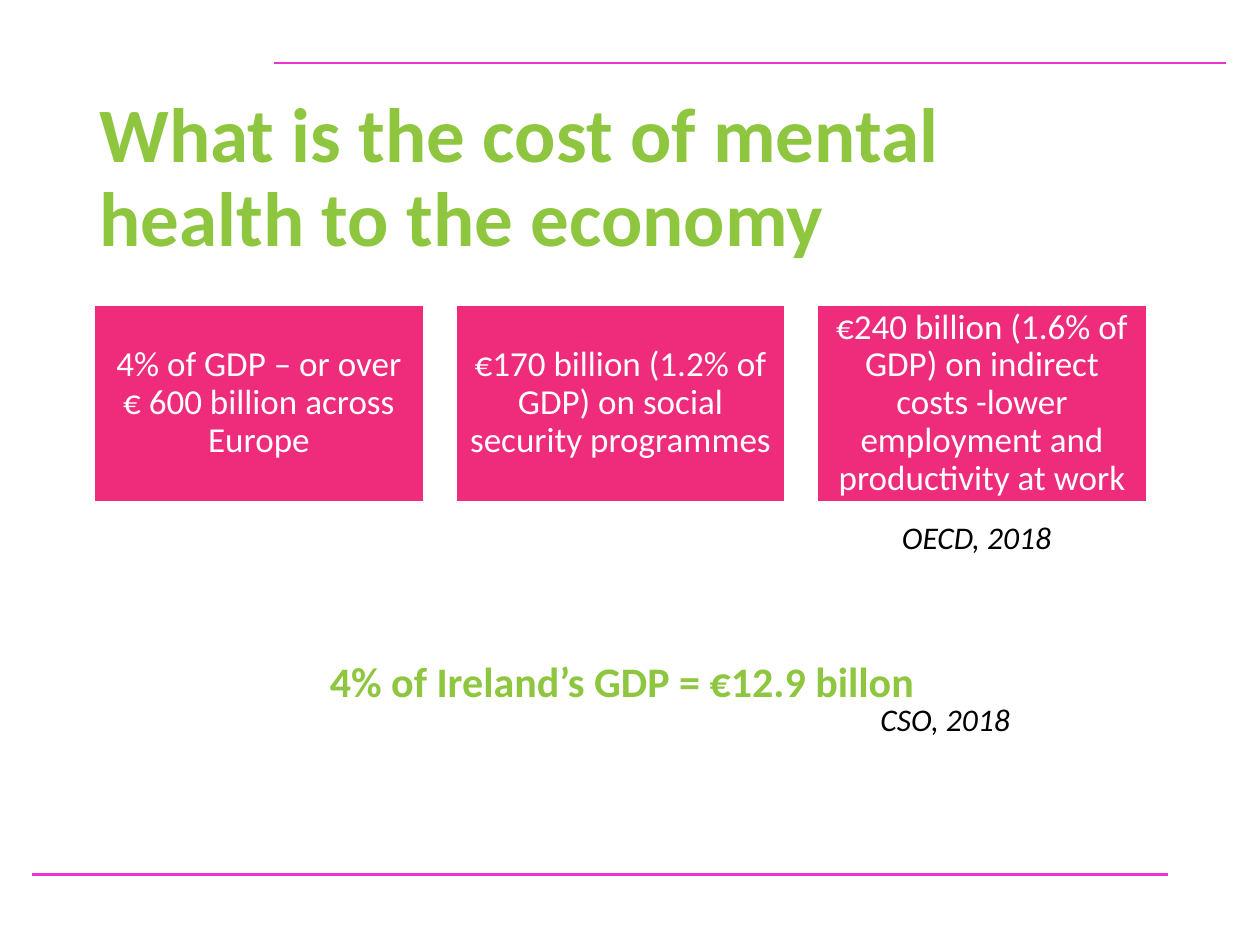
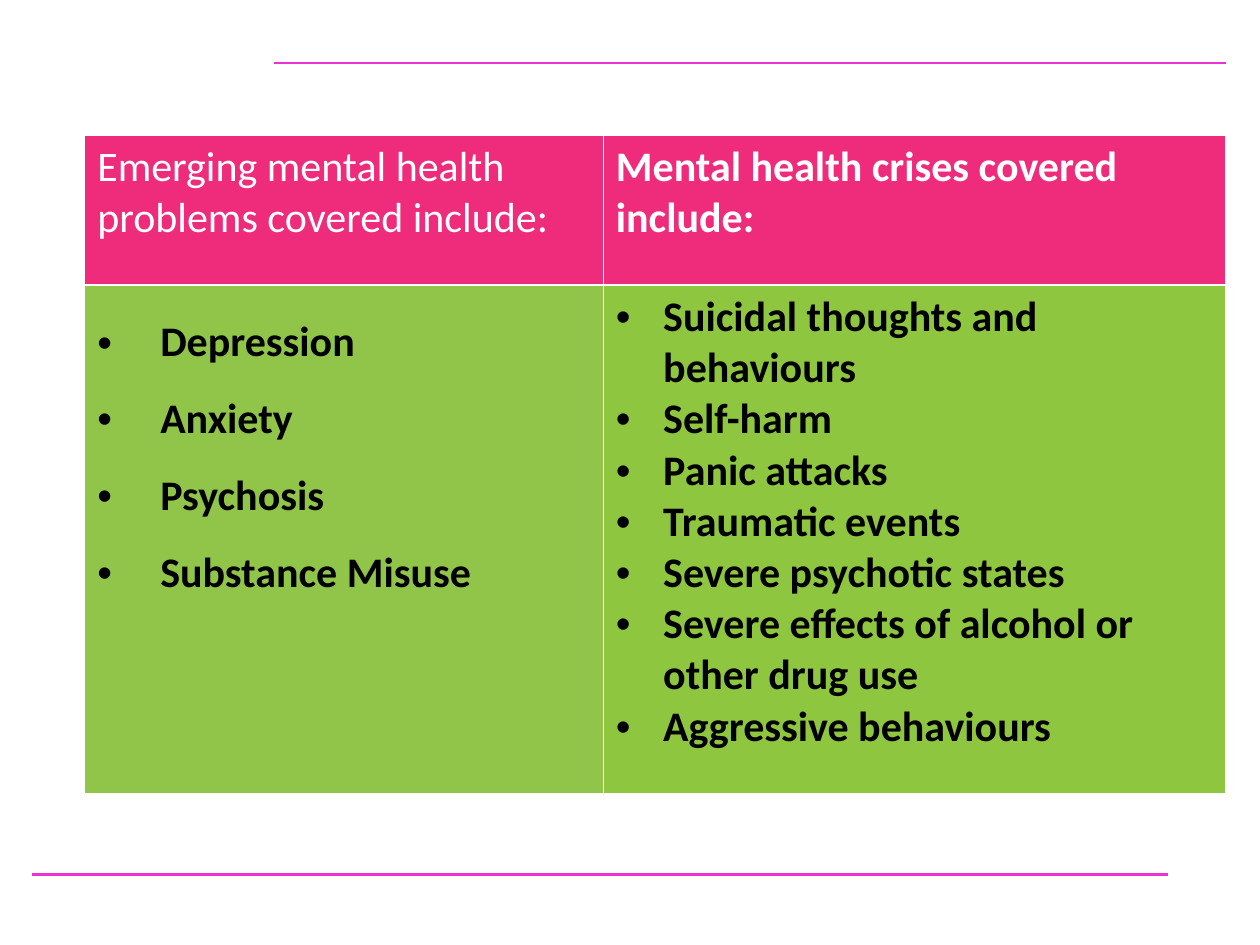
"""Build two slides on the cost and scope of mental health problems."""
import pptx
import pptx.chart.data
import pptx.dml.color
import pptx.enum.shapes
import pptx.enum.text
import pptx.oxml
import pptx.oxml.ns
import pptx.util
from lxml import etree

Pt = pptx.util.Pt
RGBColor = pptx.dml.color.RGBColor
Anchor = pptx.enum.text.MSO_ANCHOR
Align = pptx.enum.text.PP_ALIGN

FONT = "Calibri"
WHITE = RGBColor(0xFF, 0xFF, 0xFF)
BLACK = RGBColor(0x00, 0x00, 0x00)
GREEN = RGBColor(0x8E, 0xC6, 0x40)
SOFT_GREEN = RGBColor(0x91, 0xC5, 0x49)
PINK = RGBColor(0xEE, 0x2C, 0x7B)
MAGENTA = RGBColor(0xEC, 0x32, 0xD1)

TITLE_ONLY, BLANK = 5, 6
CARD_LEFT, CARD_TOP, CARD_WIDTH, CARD_HEIGHT, CARD_GAP = 54, 174.24, 188, 112.5, 18.6

COSTS = [
    "4% of GDP – or over € 600 billion across Europe",
    "€170 billion (1.2% of GDP) on social security programmes",
    "€240 billion (1.6% of GDP) on indirect costs -lower employment and productivity at work",
]
PROBLEMS = ["Depression", "Anxiety", "Psychosis", "Substance Misuse"]
CRISES = [
    "Suicidal thoughts and behaviours",
    "Self-harm",
    "Panic attacks",
    "Traumatic events",
    "Severe psychotic states",
    "Severe effects of alcohol or other drug use",
    "Aggressive behaviours",
]


def set_font(para, size, color, bold=False, italic=False):
    """Format all the text of a paragraph."""
    font = para.font
    font.name, font.size = FONT, Pt(size)
    font.bold, font.italic = bold, italic
    font.color.rgb = color


def add_rule(page, left, right, top):
    """Draw one horizontal magenta rule."""
    rule = page.shapes.add_connector(
        pptx.enum.shapes.MSO_CONNECTOR.STRAIGHT, Pt(left), Pt(top), Pt(right), Pt(top))
    rule.line.color.rgb = MAGENTA
    rule.line.width = Pt(1.5)
    etree.SubElement(rule._element.spPr, pptx.oxml.ns.qn("a:effectLst"))


def add_page(deck, layout):
    """Add a slide with the shared top and bottom rules."""
    page = deck.slides.add_slide(deck.slide_layouts[layout])
    add_rule(page, 156.5, 700.5, 36)
    add_rule(page, 18, 667.5, 499.7)
    return page


def set_title(page, text):
    """Place and format the slide title."""
    title = page.shapes.title
    title.left, title.top, title.width, title.height = Pt(49.7), Pt(72.7), Pt(620.6), Pt(59.8)
    frame = title.text_frame
    frame.text = text
    frame.word_wrap = True
    frame.auto_size = pptx.enum.text.MSO_AUTO_SIZE.NONE
    frame.vertical_anchor = Anchor.MIDDLE
    para = frame.paragraphs[0]
    para.alignment = Align.LEFT
    para.line_spacing = 0.9
    set_font(para, 44, GREEN, bold=True)


def add_card(page, left, text):
    """Add a pink card with centred white text."""
    card = page.shapes.add_shape(
        pptx.enum.shapes.MSO_SHAPE.RECTANGLE,
        Pt(left), Pt(CARD_TOP), Pt(CARD_WIDTH), Pt(CARD_HEIGHT))
    card.shadow.inherit = False
    card.fill.solid()
    card.fill.fore_color.rgb = PINK
    card.line.color.rgb = WHITE
    card.line.width = Pt(1)
    frame = card.text_frame
    frame.word_wrap = True
    frame.vertical_anchor = Anchor.MIDDLE
    frame.margin_left = frame.margin_right = Pt(6)
    frame.margin_top = frame.margin_bottom = Pt(6)
    frame.text = text
    para = frame.paragraphs[0]
    para.alignment = Align.CENTER
    para.line_spacing = 0.9
    set_font(para, 20, WHITE)


def add_label(page, left, top, width, height, text, size, color, bold=False, italic=False):
    """Add a one-line text box."""
    box = page.shapes.add_textbox(Pt(left), Pt(top), Pt(width), Pt(height))
    box.text_frame.word_wrap = True
    box.text_frame.text = text
    set_font(box.text_frame.paragraphs[0], size, color, bold, italic)


def add_bullet(para, indent):
    """Give a paragraph a round bullet with a hanging indent."""
    properties = para._p.get_or_add_pPr()
    properties.set("marL", str(Pt(indent)))
    properties.set("indent", str(-Pt(indent)))
    etree.SubElement(properties, pptx.oxml.ns.qn("a:buFont")).set("typeface", "Arial")
    etree.SubElement(properties, pptx.oxml.ns.qn("a:buChar")).set("char", "•")


def style_cell(cell, fill):
    """Set the borders, margins and fill of a cell."""
    properties = cell._tc.get_or_add_tcPr()
    for side in ("lnL", "lnR", "lnT", "lnB"):
        properties.append(pptx.oxml.parse_xml(
            f'<a:{side} {pptx.oxml.ns.nsdecls("a")} w="{Pt(1)}">'
            f'<a:solidFill><a:srgbClr val="{WHITE}"/></a:solidFill></a:{side}>'))
    cell.margin_left = cell.margin_right = Pt(7.2)
    cell.margin_top = cell.margin_bottom = Pt(3.6)
    cell.fill.solid()
    cell.fill.fore_color.rgb = fill


def fill_header(cell, text, bold):
    """Write a pink header cell."""
    style_cell(cell, PINK)
    cell.text = text
    set_font(cell.text_frame.paragraphs[0], 24, WHITE, bold)


def fill_list(cell, items, fill, indent, spacing):
    """Write a bulleted list in a cell."""
    style_cell(cell, fill)
    cell.text = "\n".join(items)
    for para in cell.text_frame.paragraphs:
        add_bullet(para, indent)
        para.line_spacing = spacing
        set_font(para, 24, BLACK, bold=True)


def build_cost_page(deck):
    """Build the slide on costs to the economy."""
    page = add_page(deck, TITLE_ONLY)
    set_title(page, "What is the cost of mental health to the economy")
    for index, cost in enumerate(COSTS):
        add_card(page, CARD_LEFT + index * (CARD_WIDTH + CARD_GAP), cost)
    add_label(page, 508.3, 292.3, 187, 29, "OECD, 2018", 18, BLACK, italic=True)
    add_label(page, 181.4, 370.8, 356.4, 36, "4% of Ireland’s GDP = €12.9 billon",
              24, GREEN, bold=True)
    add_label(page, 496, 396.7, 187, 29, "CSO, 2018", 18, BLACK, italic=True)


def build_coverage_page(deck):
    """Build the slide with the table of problems and crises."""
    page = add_page(deck, BLANK)
    table = page.shapes.add_table(2, 2, Pt(48.4), Pt(77.4), Pt(652), Pt(376)).table
    for column, width in zip(table.columns, (296.4, 355.6)):
        column.width = Pt(width)
    for row, height in zip(table.rows, (85.5, 290.5)):
        row.height = Pt(height)
    fill_header(table.cell(0, 0), "Emerging mental health problems covered include:", False)
    fill_header(table.cell(0, 1), "Mental health crises covered include:", True)
    fill_list(table.cell(1, 0), PROBLEMS, SOFT_GREEN, 36, 1.5)
    fill_list(table.cell(1, 1), CRISES, GREEN, 27, 1.0)


def main():
    """Build and save the deck."""
    deck = pptx.Presentation()
    deck.slide_width, deck.slide_height = Pt(720), Pt(540)
    build_cost_page(deck)
    build_coverage_page(deck)
    deck.save("out.pptx")


if __name__ == "__main__":
    main()
